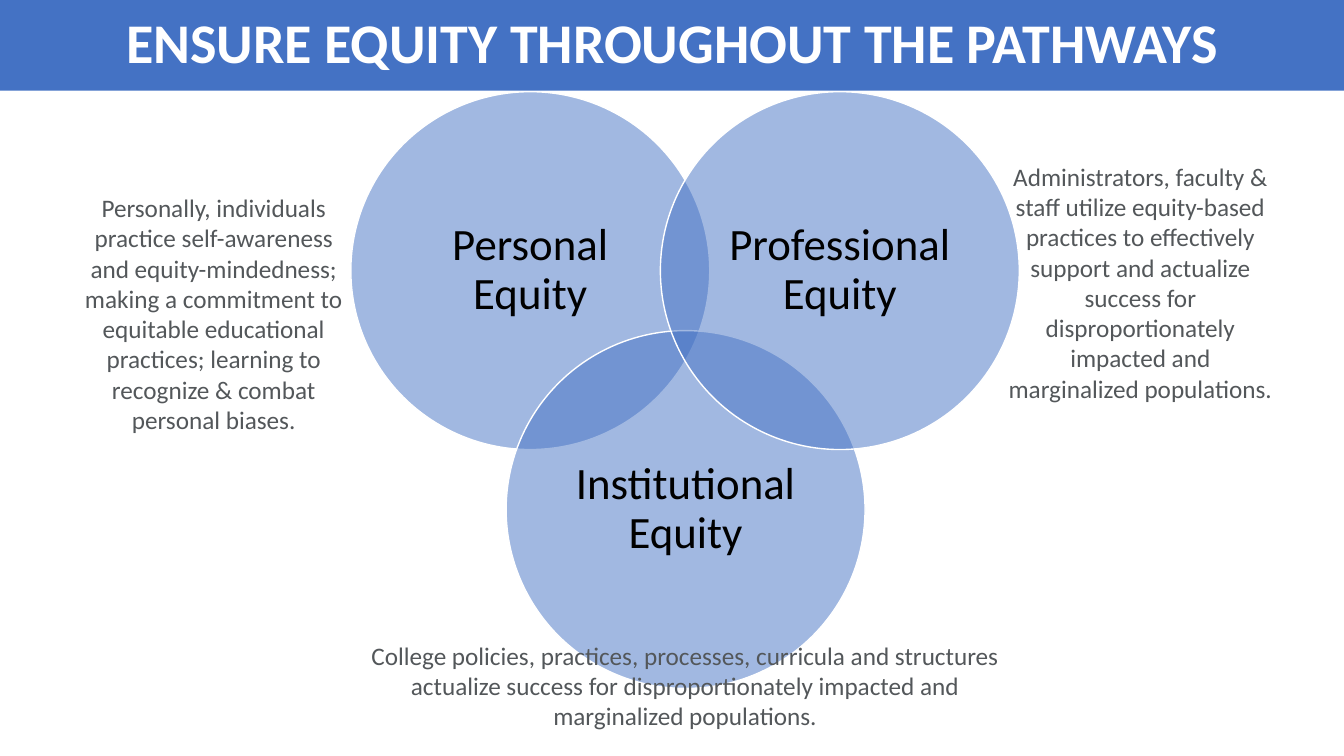
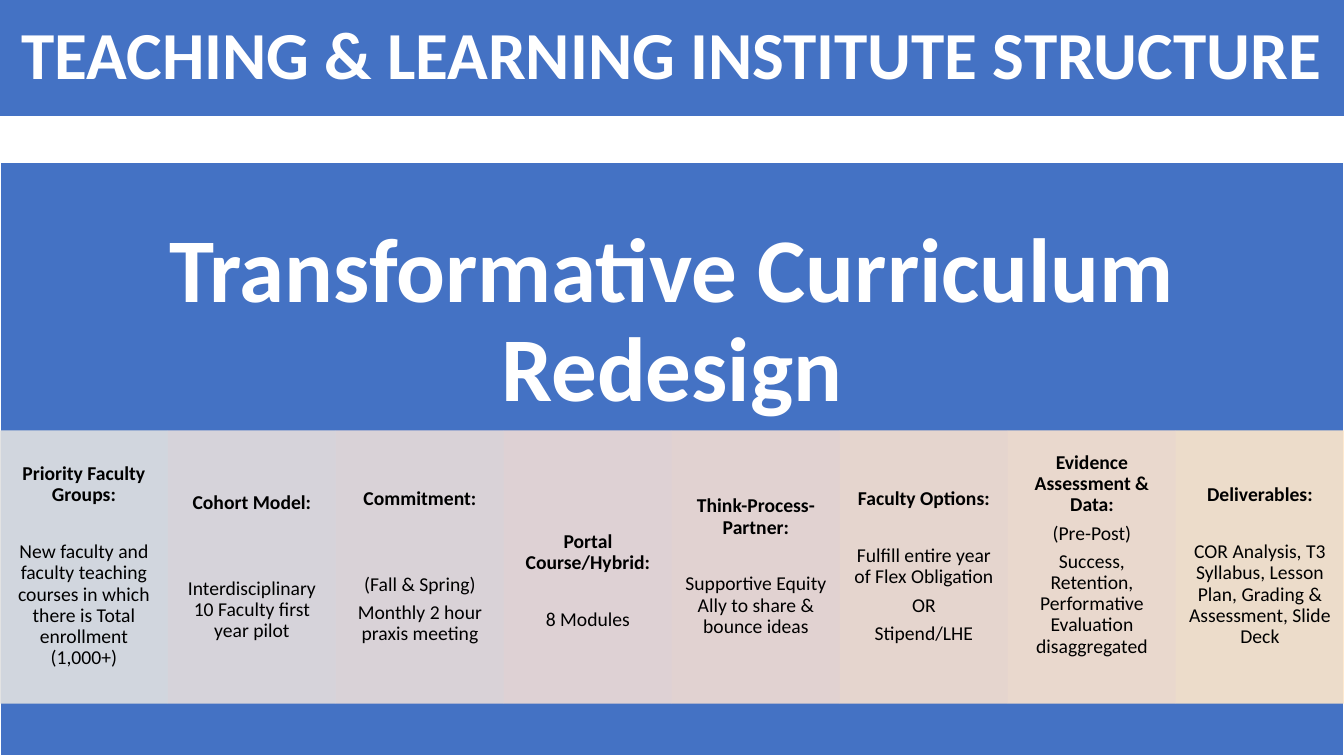
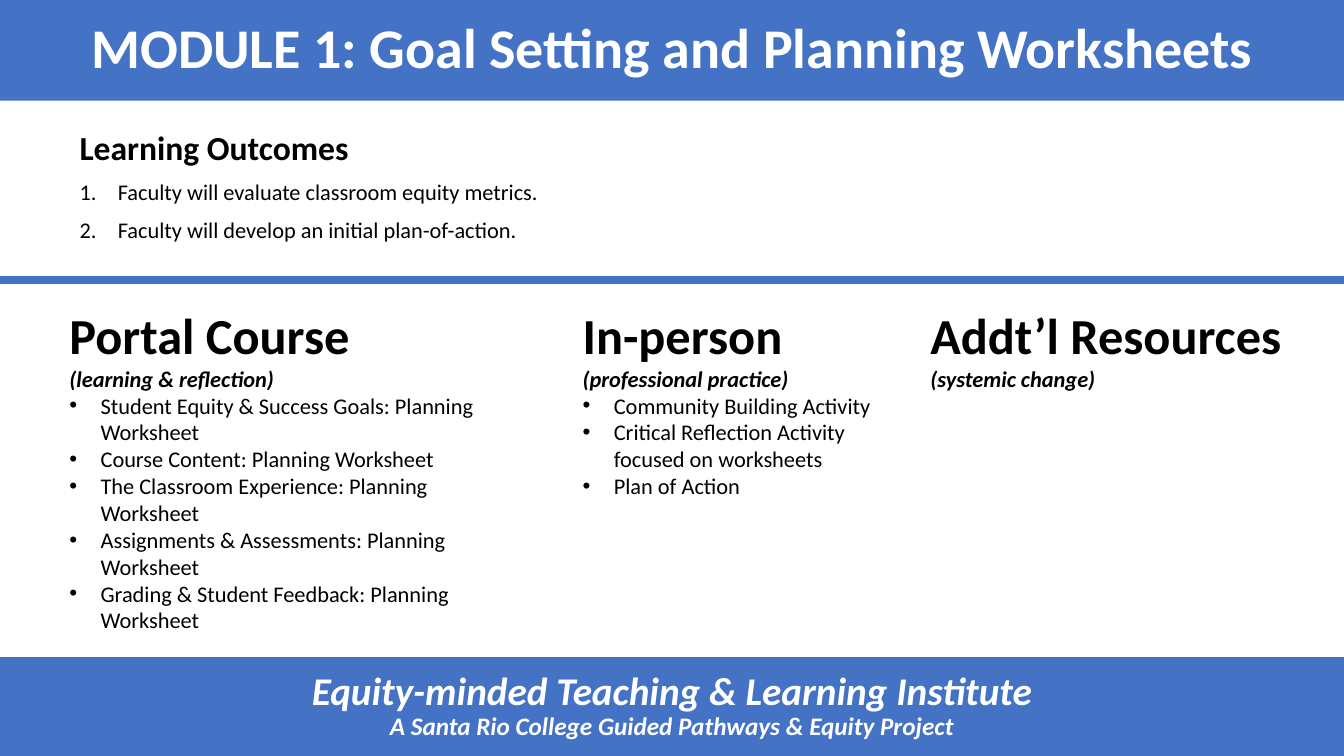
"""Builds three slides on equity pathways and a teaching institute."""
from typing import NamedTuple

import pptx
import pptx.dml.color
import pptx.enum.shapes
import pptx.enum.text
import pptx.oxml
import pptx.oxml.ns
import pptx.util
from lxml import etree

RGB = pptx.dml.color.RGBColor
SHAPE = pptx.enum.shapes.MSO_SHAPE
ALIGN = pptx.enum.text.PP_ALIGN
ANCHOR = pptx.enum.text.MSO_ANCHOR
Pt = pptx.util.Pt

PX = 9144
W, H = 1333, 750
FONT = "Calibri"
BLUE = RGB(0x44, 0x72, 0xC4)
WHITE = RGB(0xFF, 0xFF, 0xFF)
BLACK = RGB(0, 0, 0)
GRAY = RGB(0x53, 0x57, 0x5A)
COLUMN_FILLS = [
    RGB(0xE1, 0xE1, 0xE1), RGB(0xE6, 0xDE, 0xDD), RGB(0xEA, 0xDD, 0xDA), RGB(0xEF, 0xDC, 0xD6),
    RGB(0xF3, 0xDD, 0xD3), RGB(0xF7, 0xE0, 0xD0), RGB(0xFB, 0xE4, 0xCE), RGB(0xFF, 0xE8, 0xCB),
]


class Para(NamedTuple):
    text: str
    size: float
    style: str = ""
    before: float = 0
    mark: str = ""
    indent: int = 0


CIRCLE = (356, 355)
CIRCLES = [
    ("Personal Equity", 348, 91),
    ("Institutional Equity", 502, 328),
    ("Professional Equity", 655, 91),
]
DESCRIPTIONS = [
    ("College policies, practices, processes, curricula and structures actualize success for "
     "disproportionately impacted and marginalized populations.", (343, 630, 673, 101)),
    ("Administrators, faculty & staff utilize equity-based practices to effectively support and "
     "actualize success for disproportionately impacted and marginalized populations.",
     (990, 155, 282, 283)),
    ("Personally, individuals practice self-awareness and equity-mindedness; making a commitment "
     "to equitable educational practices; learning to recognize & combat personal biases.",
     (71, 186, 282, 252)),
]

# heading, top inset, skipped lines, body
COLUMNS = [
    ("Priority Faculty Groups:", 33, 1,
     ["New faculty and faculty teaching courses in which there is Total enrollment (1,000+)"]),
    ("Cohort Model:", 62, 2, ["Interdisciplinary 10 Faculty first year pilot"]),
    ("Commitment:", 58, 2, ["(Fall & Spring)", "Monthly 2 hour praxis meeting"]),
    ("Portal Course/Hybrid:", 100, 1, ["8 Modules"]),
    ("Think-Process-Partner:", 65, 1, ["Supportive Equity Ally to share & bounce ideas"]),
    ("Faculty Options:", 58, 1, ["Fulfill entire year of Flex Obligation", "OR", "Stipend/LHE"]),
    ("Evidence Assessment & Data:", 22, 0,
     ["(Pre-Post)", "Success, Retention, Performative Evaluation disaggregated"]),
    ("Deliverables:", 54, 1,
     ["COR Analysis, T3 Syllabus, Lesson Plan, Grading & Assessment, Slide Deck"]),
]
PARA_GAP, SKIPPED_LINE = 5, 20.5

OUTCOMES = ["Faculty will evaluate classroom equity metrics.",
            "Faculty will develop an initial plan-of-action."]
TRACKS = [
    ("Portal Course", "(learning & reflection)", 59, 467, [
        "Student Equity & Success Goals: Planning Worksheet",
        "Course Content: Planning Worksheet",
        "The Classroom Experience: Planning Worksheet",
        "Assignments & Assessments: Planning Worksheet",
        "Grading & Student Feedback: Planning Worksheet",
    ]),
    ("In-person", "(professional practice)", 568, 355, [
        "Community Building Activity",
        "Critical Reflection Activity focused on worksheets",
        "Plan of Action",
    ]),
    ("Addt’l Resources", "(systemic change)", 913, 373, []),
]
FOOTER = [Para("Equity-minded Teaching & Learning Institute", 28, "bi"),
          Para("A Santa Rio College Guided Pathways & Equity Project", 18, "bi")]


def px(*values):
    return [round(v * PX) for v in values]


def add_mark(p, para):
    pPr = p._p.get_or_add_pPr()
    pPr.set("marL", str(para.indent * PX))
    pPr.set("indent", str(-para.indent * PX))
    if para.mark == "1.":
        etree.SubElement(pPr, pptx.oxml.ns.qn("a:buAutoNum"), type="arabicPeriod")
    else:
        etree.SubElement(pPr, pptx.oxml.ns.qn("a:buFont"), typeface="Arial")
        etree.SubElement(pPr, pptx.oxml.ns.qn("a:buChar"), char=para.mark)


def write(sp, paras, color=BLACK, align=ALIGN.CENTER, anchor=ANCHOR.MIDDLE,
          inset=(10, 5, 10, 5), spacing=0.9):
    tf = sp.text_frame
    tf.word_wrap = True
    tf.vertical_anchor = anchor
    tf.margin_left, tf.margin_top, tf.margin_right, tf.margin_bottom = px(*inset)
    tf.text = "\n".join(para.text for para in paras)
    for p, para in zip(tf.paragraphs, paras):
        p.alignment = align
        p.line_spacing = spacing
        p.space_before = Pt(para.before)
        if para.mark:
            add_mark(p, para)
        for r in p.runs:
            r.font.name = FONT
            r.font.size = Pt(para.size)
            r.font.bold = "b" in para.style
            r.font.italic = "i" in para.style
            r.font.color.rgb = color


def add_shape(s, kind, box, fill, alpha=100, line=0):
    sp = s.shapes.add_shape(kind, *px(*box))
    sp.shadow.inherit = False
    sp.fill.solid()
    sp.fill.fore_color.rgb = fill
    if alpha < 100:
        clr = sp.fill._xPr.find(".//" + pptx.oxml.ns.qn("a:srgbClr"))
        etree.SubElement(clr, pptx.oxml.ns.qn("a:alpha"), val=str(alpha * 1000))
    if line:
        sp.line.color.rgb = WHITE
        sp.line.width = Pt(line)
    else:
        sp.line.fill.background()
    return sp


def add_text(s, box, paras, **style):
    write(s.shapes.add_textbox(*px(*box)), paras, **style)


def add_band(s, top, height, paras):
    write(add_shape(s, SHAPE.RECTANGLE, (0, top, W, height), BLUE), paras, WHITE)


def build_equity(s):
    for text, left, top in CIRCLES:
        sp = add_shape(s, SHAPE.OVAL, (left, top, *CIRCLE), BLUE, alpha=50, line=1)
        write(sp, [Para(text, 32)], inset=(13,) * 4)
    for text, box in DESCRIPTIONS:
        add_text(s, box, [Para(text, 18)], color=GRAY, anchor=ANCHOR.TOP, spacing=1)
    add_band(s, 0, 90, [Para("ENSURE EQUITY THROUGHOUT THE PATHWAYS", 40, "b")])


def build_structure(s):
    add_shape(s, SHAPE.RECTANGLE, (0, 161, W, H - 161), BLUE, line=1.5)
    add_text(s, (0, 161, W, 318), [Para("Transformative Curriculum Redesign", 65, "b")],
             color=WHITE, inset=(51,) * 4)
    width = W / len(COLUMNS)
    for i, (heading, top, skipped, body) in enumerate(COLUMNS):
        sp = add_shape(s, SHAPE.RECTANGLE, (i * width, 427, width, 271), COLUMN_FILLS[i], alpha=90)
        side = 11 if i else 7
        gaps = [PARA_GAP + skipped * SKIPPED_LINE] + [PARA_GAP] * (len(body) - 1)
        paras = [Para(heading, 14, "b")]
        paras += [Para(text, 14, before=gap) for text, gap in zip(body, gaps)]
        write(sp, paras, anchor=ANCHOR.TOP, inset=(side, top, side, 0))
    add_band(s, 0, 115, [Para("TEACHING & LEARNING INSTITUTE STRUCTURE", 48, "b")])


def build_module(s):
    add_band(s, 0, 100, [Para("MODULE 1: Goal Setting and Planning Worksheets", 40, "b")])
    outcomes = [Para("Learning Outcomes", 24, "b")]
    outcomes += [Para(text, 16, before=10, mark="1.", indent=38) for text in OUTCOMES]
    add_text(s, (69, 125, 1172, 139), outcomes, align=ALIGN.LEFT, anchor=ANCHOR.TOP)
    for name, focus, left, width, items in TRACKS:
        paras = [Para(name, 36, "b"), Para(focus, 16, "bi")]
        paras += [Para(text, 16, mark="•", indent=31) for text in items]
        add_text(s, (left, 297, width, 350), paras, align=ALIGN.LEFT, anchor=ANCHOR.TOP, spacing=1)
    rule = s.shapes.add_connector(pptx.enum.shapes.MSO_CONNECTOR.STRAIGHT, *px(0, 278, W, 278))
    rule.line.color.rgb = BLUE
    rule.line.width = Pt(6)
    etree.SubElement(rule._element.spPr, pptx.oxml.ns.qn("a:effectLst"))
    add_band(s, 652, H - 652, FOOTER)


def main():
    prs = pptx.Presentation()
    prs.slide_width, prs.slide_height = px(W, H)
    for build in (build_equity, build_structure, build_module):
        build(prs.slides.add_slide(prs.slide_layouts[6]))
    prs.save("out.pptx")


if __name__ == "__main__":
    main()
